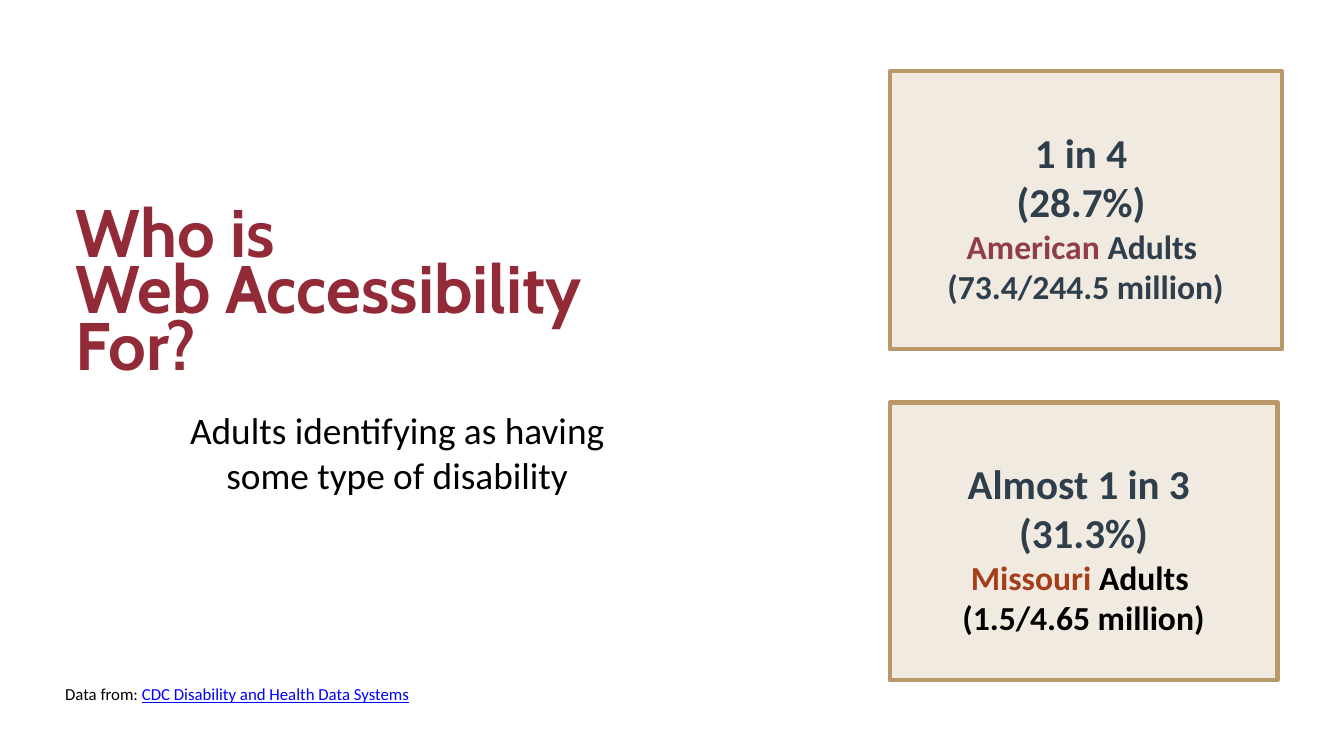
import pptx
import pptx.util
import pptx.dml.color
import pptx.enum.shapes
import pptx.enum.text
from lxml import etree

PX = 9525  # EMU per px, 96 px to the inch
RED, SLATE, BLACK, TAN = "932A38", "2E3E4B", "000000", "B99869"
LEFT = pptx.enum.text.PP_ALIGN.LEFT
CENTER = pptx.enum.text.PP_ALIGN.CENTER
TOP = pptx.enum.text.MSO_ANCHOR.TOP
MIDDLE = pptx.enum.text.MSO_ANCHOR.MIDDLE

# Content: each paragraph is a list of (text, size, colour) runs
title_lines = [[("Who is \vWeb Accessibility", 72, RED)], [("For?", 72, RED)]]
subtitle_lines = [
    [("Adults identifying as having ", 40, BLACK)],
    [("some type of disability ", 40, BLACK)],
]
source_lines = [[("Data from: ", 18, BLACK),
                 ("CDC Disability and Health Data Systems", 18, "0000FF")]]
statistics = [
    ((1271, 102, 560, 397), [
        [("1 in 4 ", 44, SLATE)],
        [("(28.7%) ", 44, SLATE)],
        [("American ", 36, "913D49"), ("Adults ", 36, SLATE)],
        [("(73.4/244.5 million)", 36, SLATE)],
    ]),
    ((1271, 575, 554, 397), [
        [("Almost 1 in 3 ", 44, SLATE)],
        [("(31.3%)", 44, SLATE)],
        [("Missouri", 36, "A43E1B"), (" Adults ", 36, BLACK)],
        [("(1.5/4.65 million)", 36, BLACK)],
    ]),
]


def rgb(value):
    return pptx.dml.color.RGBColor.from_string(value)


def px(*values):
    return [value * PX for value in values]


def write(frame, lines, font="Calibri", bold=False, align=LEFT,
          anchor=TOP, insets=(0, 0, 0, 0), spacing=1.0):
    frame.word_wrap = True
    frame.auto_size = pptx.enum.text.MSO_AUTO_SIZE.NONE
    frame.vertical_anchor = anchor
    (frame.margin_left, frame.margin_top,
     frame.margin_right, frame.margin_bottom) = px(*insets)
    for number, line in enumerate(lines):
        paragraph = frame.add_paragraph() if number else frame.paragraphs[0]
        paragraph.alignment = align
        paragraph.line_spacing = spacing
        paragraph.space_before = pptx.util.Pt(0)
        for text, size, colour in line:
            for part, piece in enumerate(text.split("\v")):
                if part:
                    paragraph.add_line_break()
                run = paragraph.add_run()
                run.text = piece
                run.font.name = font
                run.font.size = pptx.util.Pt(size)
                run.font.bold = bold
                run.font.color.rgb = rgb(colour)


deck = pptx.Presentation()
deck.slide_width, deck.slide_height = px(1920, 1080)
slide = deck.slides.add_slide(deck.slide_layouts[5])

# Title
title = slide.shapes.title
title.left, title.top, title.width, title.height = px(108, 303, 1164, 244)
write(title.text_frame, title_lines, font="Cabin", bold=True, spacing=0.7)

# Subtitle
subtitle = slide.shapes.add_textbox(*px(108, 582, 931, 130))
write(subtitle.text_frame, subtitle_lines, align=CENTER)

# Statistic cards
for place, lines in statistics:
    card = slide.shapes.add_shape(
        pptx.enum.shapes.MSO_SHAPE.RECTANGLE, *px(*place))
    card.shadow.inherit = False
    card.fill.solid()
    card.fill.fore_color.rgb = rgb(TAN)
    fill_colour = card.fill._xPr.solidFill[0]
    etree.SubElement(fill_colour, pptx.oxml.ns.qn("a:alpha"), val="20000")
    card.line.color.rgb = rgb(TAN)
    card.line.width = pptx.util.Pt(4.5)
    write(card.text_frame, lines, bold=True, align=CENTER,
          anchor=MIDDLE, insets=(10, 24, 10, 5))

# Data source
source = slide.shapes.add_textbox(*px(79, 972, 960, 38))
write(source.text_frame, source_lines, insets=(14, 5, 10, 5))
source.text_frame.paragraphs[0].runs[1].font.underline = True

deck.save("out.pptx")
